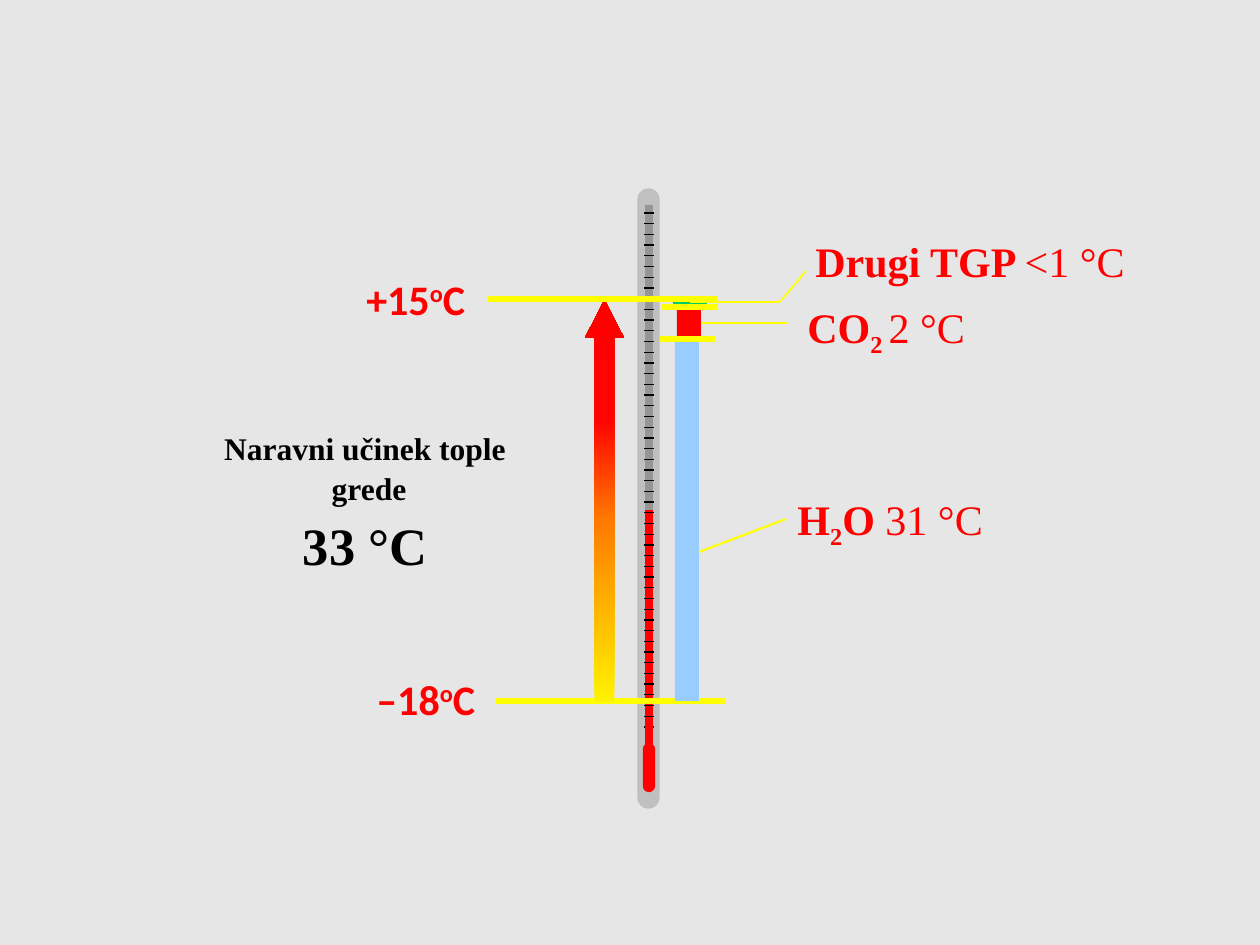
from dataclasses import dataclass

from lxml.etree import SubElement
from pptx import Presentation
from pptx.dml.color import RGBColor
from pptx.enum.shapes import MSO_CONNECTOR as Connector
from pptx.enum.shapes import MSO_SHAPE as Preset
from pptx.enum.text import PP_ALIGN as Align
from pptx.oxml.ns import qn
from pptx.util import Emu, Pt

PX_PER_INCH = 126


@dataclass(frozen=True)
class Theme:
    page: str = "E7E6E6"
    glass: str = "C0C0C0"
    channel: str = "969696"
    ink: str = "000000"
    red: str = "FF0000"
    yellow: str = "FFFF00"
    green: str = "00CC66"
    blue: str = "99CCFF"
    warming: tuple = ((0, "FFF200"), (45, "FF7A00"), (70, "FF0300"), (100, "FF0000"))
    serif: str = "Times New Roman"
    sans: str = "Calibri"
    heading: int = 18
    label: int = 24
    total: int = 30


@dataclass(frozen=True)
class Box:
    left: int
    top: int
    width: int
    height: int


@dataclass(frozen=True)
class Stroke:
    start: tuple
    end: tuple
    color: str
    points: float


@dataclass(frozen=True)
class Span:
    text: str
    bold: bool = True
    baseline: int = 0


@dataclass(frozen=True)
class Label:
    box: Box
    paras: tuple
    sizes: tuple = (24,)
    font: str = "Times New Roman"
    color: str = "FF0000"
    align: Align = Align.LEFT
    hanging: bool = True


THEME = Theme()


def px(value: float) -> Emu:
    return Emu(round(value * 914400 / PX_PER_INCH))


def rgb(color: str) -> RGBColor:
    return RGBColor.from_string(color)


def draw_stroke(shapes, stroke: Stroke) -> None:
    ends = [px(value) for value in (*stroke.start, *stroke.end)]
    line = shapes.add_connector(Connector.STRAIGHT, *ends)
    line.line.color.rgb = rgb(stroke.color)
    line.line.width = Pt(stroke.points)
    SubElement(line._element.spPr, qn("a:effectLst"))


def draw_shape(shapes, preset: Preset, box: Box, color: str):
    shape = shapes.add_shape(preset, px(box.left), px(box.top), px(box.width), px(box.height))
    shape.shadow.inherit = False
    shape.fill.solid()
    shape.fill.fore_color.rgb = rgb(color)
    shape.line.fill.background()
    return shape


def draw_capsule(shapes, box: Box, color: str) -> None:
    """Draw an upright rounded bar from its lying frame."""
    capsule = draw_shape(shapes, Preset.ROUNDED_RECTANGLE, box, color)
    capsule.adjustments[0] = 0.5
    capsule.rotation = 270
    capsule.line.color.rgb = rgb(color)
    capsule.line.width = Pt(0.75)


def draw_label(shapes, label: Label) -> None:
    box = label.box
    frame = shapes.add_textbox(px(box.left), px(box.top), px(box.width), px(box.height)).text_frame
    frame.word_wrap = True
    for index, (spans, size) in enumerate(zip(label.paras, label.sizes)):
        para = frame.add_paragraph() if index else frame.paragraphs[0]
        para.alignment = label.align
        if label.hanging:
            para.line_spacing = 1.05
            properties = para._p.get_or_add_pPr()
            properties.set("marL", str(px(8)))
            properties.set("indent", str(-px(8)))
        if index:
            para.space_before = Pt(2)
        for span in spans:
            run = para.add_run()
            run.text = span.text
            run.font.name = label.font
            run.font.size = Pt(size)
            run.font.bold = span.bold
            run.font.color.rgb = rgb(label.color)
            if span.baseline:
                run._r.get_or_add_rPr().set("baseline", str(span.baseline * 1000))


def draw_thermometer(shapes) -> None:
    center, foot = 649, 759
    first, last, gaps = 727, 213, 48
    levels = [first + (last - first) * step / gaps for step in range(gaps + 1)]
    ticks = [Stroke((644, y), (654, y), THEME.ink, 0.75) for y in levels]
    draw_capsule(shapes, Box(339, 488, 619, 21), THEME.glass)
    draw_stroke(shapes, Stroke((center, foot), (center, last), THEME.ink, 0.75))
    draw_stroke(shapes, ticks[0])
    draw_stroke(shapes, Stroke((center, foot), (center, 205), THEME.channel, 4.75))
    draw_stroke(shapes, Stroke((center, foot), (center, 510), THEME.red, 4.75))
    draw_capsule(shapes, Box(625, 762, 48, 11), THEME.red)
    for tick in ticks[1:]:
        draw_stroke(shapes, tick)


def draw_warming_arrow(shapes) -> None:
    arrow = draw_shape(shapes, Preset.UP_ARROW, Box(585, 300, 39, 402), THEME.red)
    arrow.adjustments[0] = 0.5
    arrow.adjustments[1] = 0.97
    arrow.fill.gradient()
    arrow.fill.gradient_angle = 90
    stops = arrow._element.spPr.find(".//" + qn("a:gsLst"))
    for stop in list(stops):
        stops.remove(stop)
    for percent, color in THEME.warming:
        stop = SubElement(stops, qn("a:gs"), pos=str(percent * 1000))
        SubElement(stop, qn("a:srgbClr"), val=color)


def draw_gas(shapes, bar: Box, color: str, strokes: tuple, label: Label) -> None:
    """Draw one gas as a bar with its marker, leader lines and label."""
    draw_shape(shapes, Preset.RECTANGLE, bar, color)
    for stroke in strokes:
        draw_stroke(shapes, stroke)
    draw_label(shapes, label)


def degree_label(box: Box, value: str) -> Label:
    spans = (Span(value), Span("o", baseline=30), Span("C"))
    return Label(box, (spans,), font=THEME.sans, hanging=False)


def main() -> None:
    deck = Presentation()
    deck.slide_width, deck.slide_height = px(1260), px(945)
    page = deck.slides.add_slide(deck.slide_layouts[6])
    page.background.fill.solid()
    page.background.fill.fore_color.rgb = rgb(THEME.page)
    shapes = page.shapes
    yellow = THEME.yellow

    draw_thermometer(shapes.add_group_shape().shapes)
    draw_label(shapes, Label(
        Box(180, 421, 370, 117),
        ((Span("Naravni učinek tople grede"),), (Span("33 °C"),)),
        sizes=(THEME.heading, THEME.total), color=THEME.ink, align=Align.CENTER))
    draw_stroke(shapes, Stroke((496, 701), (725, 701), yellow, 3))
    draw_warming_arrow(shapes)

    draw_gas(shapes.add_group_shape().shapes, Box(673, 299, 34, 7), THEME.green,
             (Stroke((690, 302), (780, 302), yellow, 1),
              Stroke((780, 302), (806, 271), yellow, 1)),
             Label(Box(803, 227, 345, 55), ((Span("Drugi TGP "), Span("<1 °C", False)),)))
    draw_gas(shapes.add_group_shape().shapes, Box(677, 307, 24, 32), THEME.red,
             (Stroke((701, 323), (788, 323), yellow, 0.75),
              Stroke((662, 307), (717, 307), yellow, 3)),
             Label(Box(795, 292, 204, 55),
                   ((Span("CO"), Span("2 ", baseline=-25), Span("2 °C", False)),)))
    draw_gas(shapes.add_group_shape().shapes, Box(675, 339, 24, 362), THEME.blue,
             (Stroke((699, 552), (786, 519), yellow, 1.25),
              Stroke((660, 339), (715, 339), yellow, 3)),
             Label(Box(785, 484, 220, 55),
                   ((Span("H"), Span("2", baseline=-25), Span("O "), Span("31 °C", False)),)))

    draw_stroke(shapes, Stroke((488, 299), (717, 299), yellow, 3))
    draw_label(shapes, degree_label(Box(364, 667, 140, 63), "–18"))
    draw_label(shapes, degree_label(Box(354, 267, 140, 63), "+15"))
    deck.save("out.pptx")


if __name__ == "__main__":
    main()
